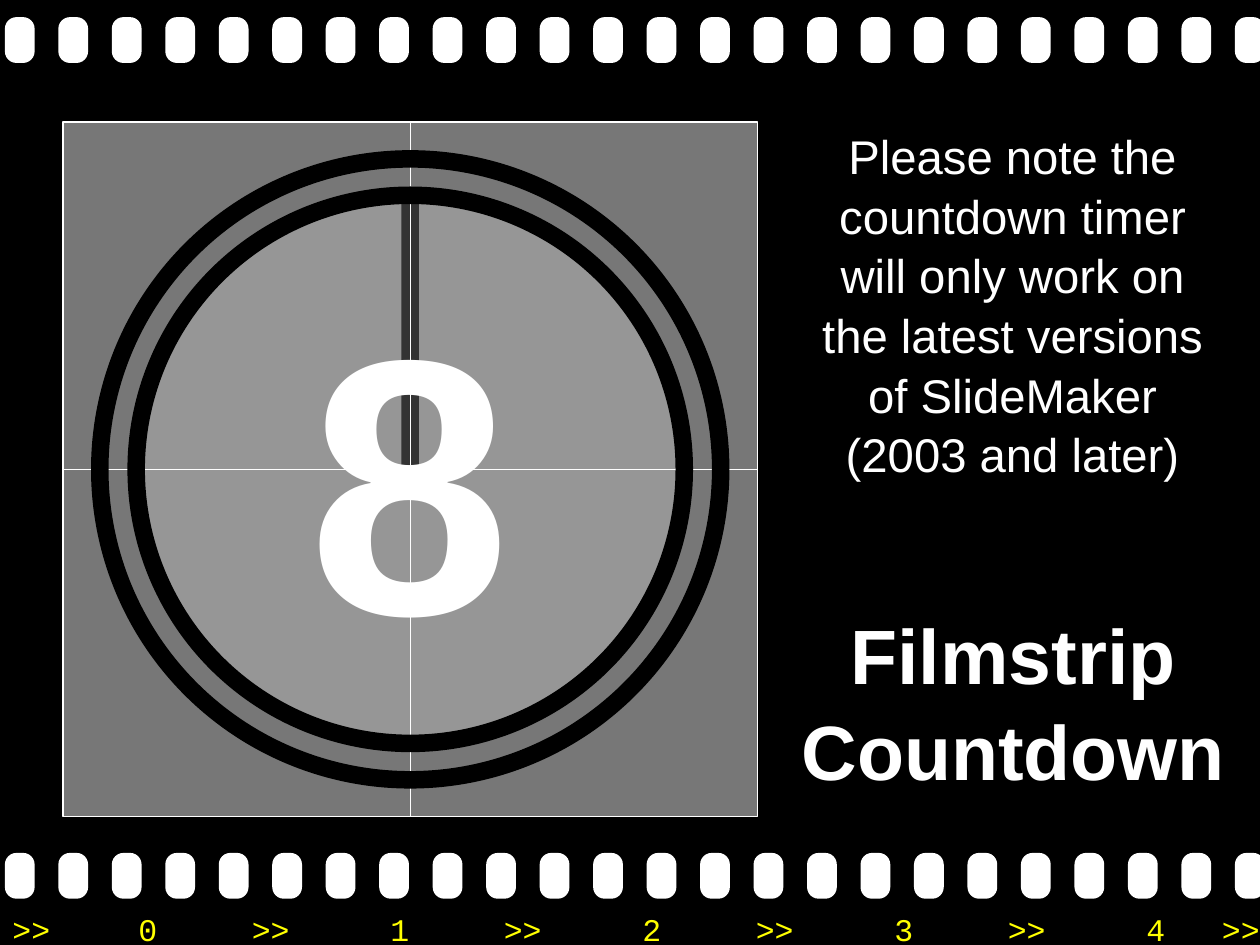
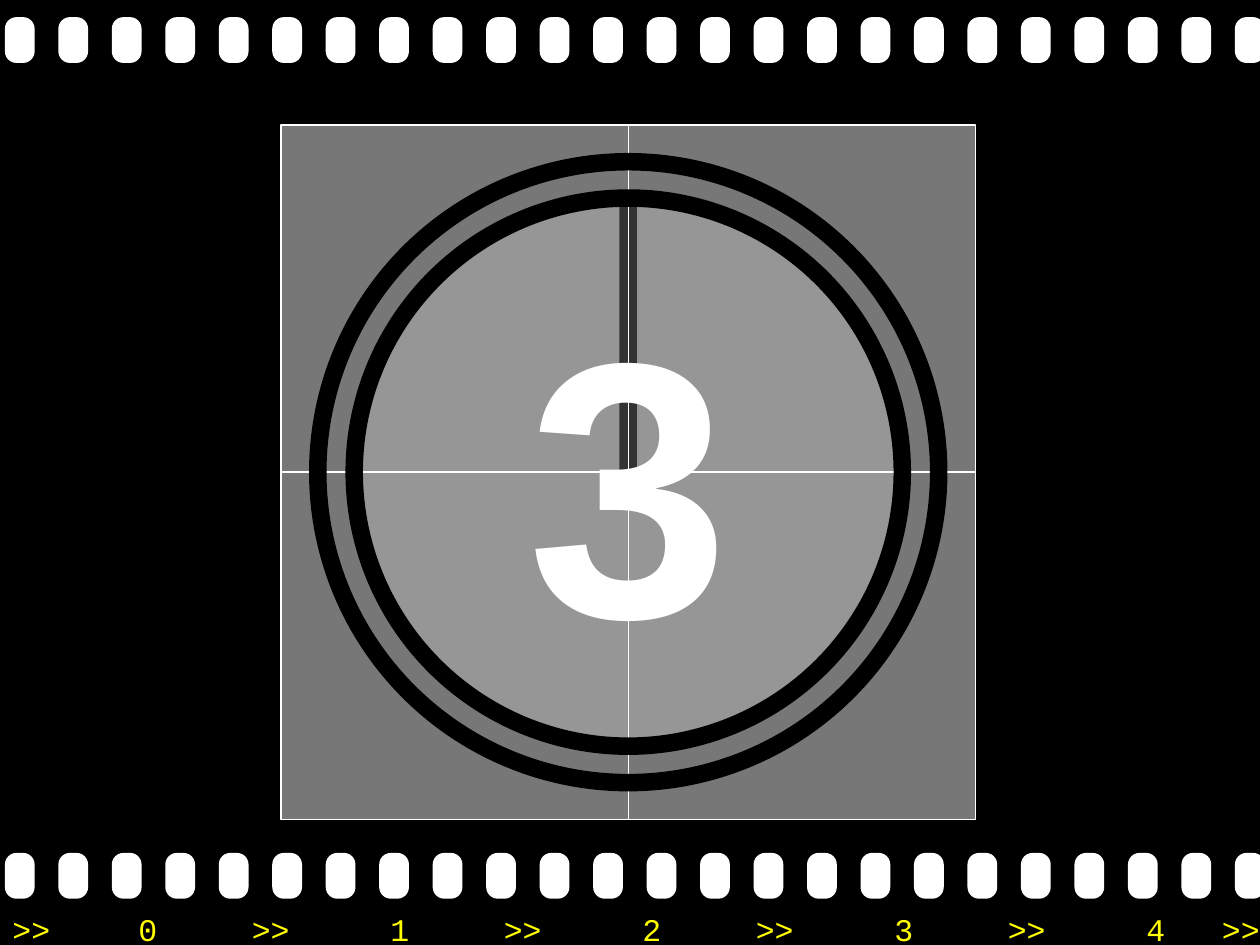
import pptx
import pptx.dml.color
import pptx.enum.shapes
import pptx.enum.text
import pptx.oxml.ns
import pptx.util
from lxml import etree

Pt = pptx.util.Pt
SHAPE = pptx.enum.shapes.MSO_SHAPE
ALIGN = pptx.enum.text.PP_ALIGN
ANCHOR = pptx.enum.text.MSO_ANCHOR
qn = pptx.oxml.ns.qn

BLACK, WHITE, YELLOW = "000000", "FFFFFF", "FFFF00"
FRAME_GREY, DISC_GREY, HAND_GREY = "777777", "969696", "333333"

SLIDE_W, SLIDE_H = 720, 540
FRAME_SIDE = 396.8
HAIRLINE = 0.75


def rgb(hex_code):
    return pptx.dml.color.RGBColor.from_string(hex_code)


def add_part(shapes, kind, left, top, width, height, fill=None, line=None, line_width=HAIRLINE):
    part = shapes.add_shape(kind, Pt(left), Pt(top), Pt(width), Pt(height))
    part.shadow.inherit = False
    if fill:
        part.fill.solid()
        part.fill.fore_color.rgb = rgb(fill)
    else:
        part.fill.background()
    if line:
        part.line.color.rgb = rgb(line)
        part.line.width = Pt(line_width)
    else:
        part.line.fill.background()
    return part


def write(frame, text, size, color=WHITE, font="Arial", bold=False,
          align=ALIGN.CENTER, spacing=None):
    frame.text = text
    for paragraph in frame.paragraphs:
        paragraph.alignment = align
        paragraph.line_spacing = spacing
        for run in paragraph.runs:
            run.font.name = font
            run.font.size = Pt(size)
            run.font.bold = bold
            run.font.color.rgb = rgb(color)


def add_text(slide, left, top, width, height, text, size, **style):
    box = slide.shapes.add_textbox(Pt(left), Pt(top), Pt(width), Pt(height))
    box.text_frame.word_wrap = True
    write(box.text_frame, text, size, **style)
    return box.text_frame


def add_perforations(slide, top):
    """A row of evenly spaced film holes."""
    holes = slide.shapes.add_group_shape().shapes
    for index in range(24):
        hole = add_part(holes, SHAPE.ROUNDED_RECTANGLE, 2.8 + index * 30.56, top, 17, 26.2, WHITE)
        hole.adjustments[0] = 0.39


def add_frame_numbers(slide, left, top):
    """The yellow edge numbers, spaced with tab stops."""
    label = ">>\t" + "\t>>\t".join(str(number) for number in range(5)) + "\t>>"
    frame = add_text(slide, left, top, 734, 29, label, 18, color=YELLOW,
                     font="Courier New", align=ALIGN.LEFT)
    tabs = etree.SubElement(frame.paragraphs[0]._p.get_or_add_pPr(), qn("a:tabLst"))
    for stop in (72, 136.8, 216, 280.8, 360, 424.8, 504, 568.8, 648, 691.2):
        etree.SubElement(tabs, qn("a:tab"), pos=str(Pt(stop)), algn="l")


def add_crosshair(slide, frame, begin_side, end_side):
    """A hairline between two opposite sides of the frame."""
    hair = slide.shapes.add_connector(pptx.enum.shapes.MSO_CONNECTOR.STRAIGHT, 0, 0, 0, 0)
    hair.begin_connect(frame, begin_side)
    hair.end_connect(frame, end_side)
    hair.line.color.rgb = rgb(WHITE)
    hair.line.width = Pt(HAIRLINE)
    etree.SubElement(hair._element.spPr, qn("a:effectLst"))


def add_countdown(slide, left, top, digit):
    """The square film frame with its sweep hand, rings and digit."""
    center_x, center_y = left + FRAME_SIDE / 2, top + FRAME_SIDE / 2

    def add_circle(diameter, **look):
        return add_part(slide.shapes, SHAPE.OVAL, center_x - diameter / 2,
                        center_y - diameter / 2, diameter, diameter, **look)

    frame = add_part(slide.shapes, SHAPE.RECTANGLE, left, top, FRAME_SIDE, FRAME_SIDE,
                     FRAME_GREY, WHITE)
    add_circle(312, fill=DISC_GREY, line=WHITE)
    hand_w, hand_h = 10, 155.5
    add_part(slide.shapes, SHAPE.RECTANGLE, center_x - hand_w / 2, center_y - hand_h,
             hand_w, hand_h, HAND_GREY)
    add_crosshair(slide, frame, 0, 2)
    add_crosshair(slide, frame, 3, 1)

    # Rings; the inner one carries the digit
    inner_ring = add_circle(313.2, line=BLACK, line_width=10)
    inner_ring.text_frame.word_wrap = False
    inner_ring.text_frame.vertical_anchor = ANCHOR.MIDDLE
    write(inner_ring.text_frame, digit, 208, bold=True)
    add_circle(354.8, line=BLACK, line_width=10)


def add_film_slide(prs):
    """A slide with the film strip edges."""
    slide = prs.slides.add_slide(prs.slide_layouts[6])
    slide.background.fill.solid()
    slide.background.fill.fore_color.rgb = rgb(BLACK)
    for top in (487.4, 9.8):
        add_perforations(slide, top)
    add_frame_numbers(slide, 0, 516.2)
    return slide


def add_title_panel(slide, left, top):
    """The note and the title beside the frame."""
    add_text(slide, left + 75, top, 234, 204,
             "Please note the countdown timer will only work on the latest versions "
             "of SlideMaker (2003 and later)", 27, spacing=1.05)
    title = add_text(slide, left, top + 271.4, 385, 156, "Filmstrip\nCountdown", 44,
                     bold=True, spacing=1.04)
    title.margin_top = Pt(6)


def main():
    prs = pptx.Presentation()
    prs.slide_width, prs.slide_height = Pt(SLIDE_W), Pt(SLIDE_H)

    opening = add_film_slide(prs)
    add_countdown(opening, 36, 69.8, "8")
    add_title_panel(opening, 386.6, 67.7)

    countdown = add_film_slide(prs)
    add_countdown(countdown, 160.6, 71.4, "3")

    prs.save("out.pptx")


if __name__ == "__main__":
    main()
